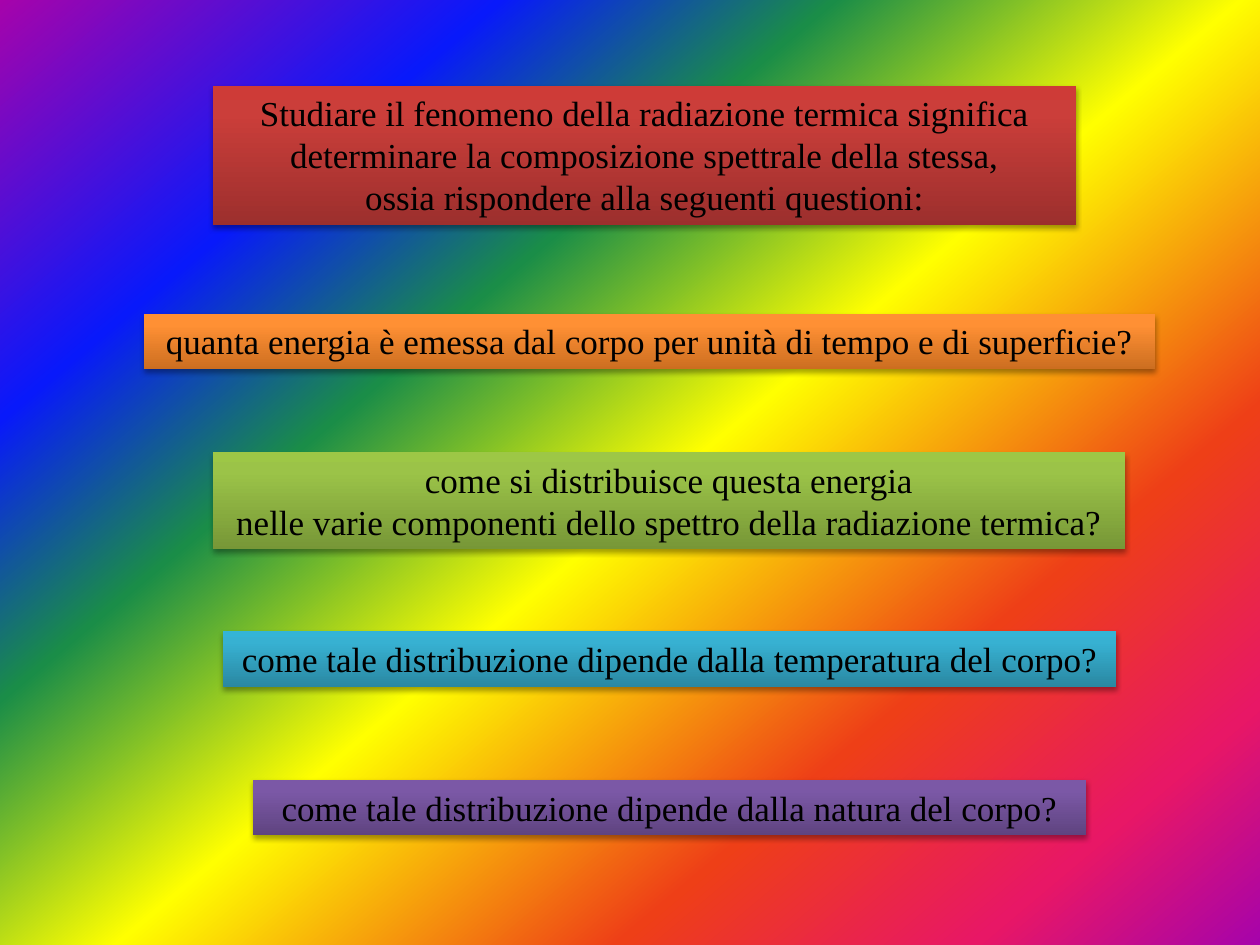
from lxml import etree
from pptx import Presentation
from pptx.dml.color import RGBColor
from pptx.enum import shapes, text
from pptx.oxml import ns
from pptx.util import Inches, Pt

FONT = "Times New Roman"
RAINBOW = [(0, "A603AB"), (21, "0819FB"), (35, "1A8D48"), (52, "FFFF00"),
           (73, "EE3F17"), (88, "E81766"), (100, "A603AB")]

# Box (left, top, width, height), colours from bottom to top, lines of text
BANNERS = [
    ((1.69, 0.68, 6.85, 1.11), ("9C2F2D", "CB3E3A", "CE3B37"),
     ["Studiare il fenomeno della radiazione termica significa",
      "determinare la composizione spettrale della stessa,",
      "ossia rispondere alla seguenti questioni:"]),
    ((1.14, 2.49, 8.03, 0.44), ("CC6E20", "FF9034", "FF9136"),
     ["quanta energia è emessa dal corpo per unità di tempo e di superficie?"]),
    ((1.69, 3.59, 7.24, 0.77), ("779737", "9BC348", "9DC746"),
     ["come si distribuisce questa energia",
      "nelle varie componenti dello spettro della radiazione termica?"]),
    ((1.77, 5.01, 7.09, 0.44), ("2A88A2", "37B1D2", "34B4D6"),
     ["come tale distribuzione dipende dalla temperatura del corpo?"]),
    ((2.01, 6.19, 6.61, 0.44), ("5F4480", "7B58A6", "7C57A8"),
     ["come tale distribuzione dipende dalla natura del corpo?"]),
]


def rgb(value):
    return RGBColor.from_string(value)


def add(parent, tag, **attrs):
    child = etree.SubElement(parent, ns.qn(tag))
    for name, value in attrs.items():
        child.set(name, str(value))
    return child


def set_gradient(fill, element, stops, angle):
    """Fill with (percent, colour) stops; the angle runs clockwise."""
    fill.gradient()
    grad = element.find(".//" + ns.qn("a:gradFill"))
    for child in list(grad):
        grad.remove(child)
    stop_list = add(grad, "a:gsLst")
    for percent, colour in stops:
        stop = add(stop_list, "a:gs", pos=percent * 1000)
        add(stop, "a:srgbClr", val=rgb(colour))
    add(grad, "a:lin", ang=angle * 60000, scaled=0)


def set_shadow(sp):
    sp.shadow.inherit = False
    effects = sp._element.spPr.find(ns.qn("a:effectLst"))
    shadow = add(effects, "a:outerShdw", blurRad=Pt(3.1), dist=Pt(1.8),
                 dir=90 * 60000, rotWithShape=0)
    add(add(shadow, "a:srgbClr", val=rgb("000000")), "a:alpha", val=35000)


def add_banner(s, box, colours, lines):
    sp = s.shapes.add_shape(shapes.MSO_SHAPE.RECTANGLE, *map(Inches, box))
    set_gradient(sp.fill, sp._element.spPr, zip((0, 80, 100), colours), 270)
    sp.line.fill.background()
    set_shadow(sp)

    # Centred text, one paragraph a line
    tf = sp.text_frame
    tf.text = "\n".join(lines)
    tf.word_wrap = True
    tf.auto_size = text.MSO_AUTO_SIZE.SHAPE_TO_FIT_TEXT
    tf.vertical_anchor = text.MSO_ANCHOR.TOP
    for p in tf.paragraphs:
        p.alignment = text.PP_ALIGN.CENTER
        for r in p.runs:
            r.font.name = FONT
            r.font.size = Pt(20)
            r.font.color.rgb = rgb("000000")


def main():
    prs = Presentation()
    prs.slide_width, prs.slide_height = Inches(10), Inches(7.5)
    s = prs.slides.add_slide(prs.slide_layouts[6])

    # Rainbow background
    set_gradient(s.background.fill, s._element, RAINBOW, 50)

    # Statement and the four questions
    for box, colours, lines in BANNERS:
        add_banner(s, box, colours, lines)

    prs.save("out.pptx")


if __name__ == "__main__":
    main()
